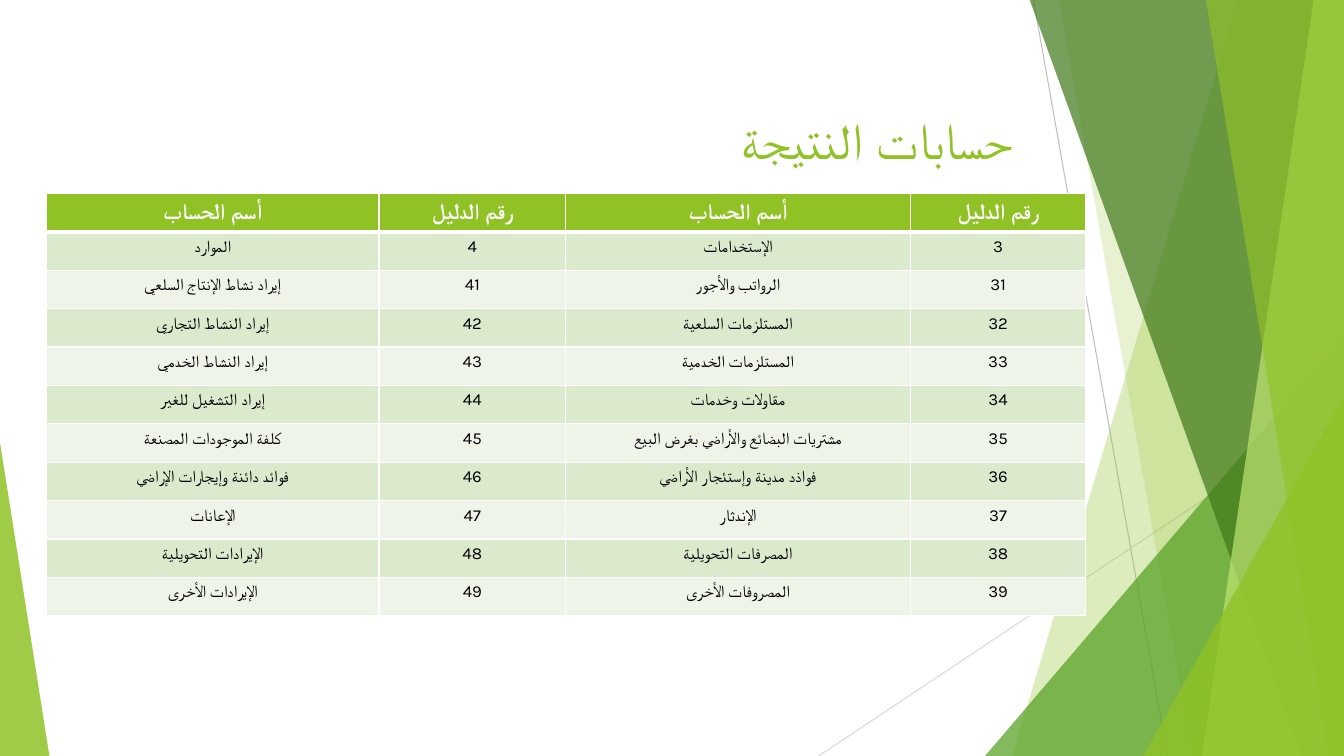
import pptx
import pptx.dml.color
import pptx.enum.shapes
import pptx.enum.text
import pptx.oxml.ns
import pptx.util
from lxml import etree

Inches = pptx.util.Inches
Pt = pptx.util.Pt
qn = pptx.oxml.ns.qn
ALIGN = pptx.enum.text.PP_ALIGN

HUE = {
    "lime": "90C226", "leaf": "54A021", "moss": "3F7819", "pale": "C0E474",
    "band": "DBE9CD", "soft": "EEF4E8", "white": "FFFFFF", "black": "000000",
    "gray": "BFBFBF", "mist": "D9D9D9",
}

HEADS = ["أسم الحساب", "رقم الدليل"] * 2
ROWS = [
    ("الموارد", "4", "الإستخدامات", "3"),
    ("إيراد نشاط الإنتاج السلعي", "41", "الرواتب والأجور", "31"),
    ("إيراد النشاط التجاري", "42", "المستلزمات السلعية", "32"),
    ("إيراد النشاط الخدمي", "43", "المستلزمات الخدمية", "33"),
    ("إيراد التشغيل للغير", "44", "مقاولات وخدمات", "34"),
    ("كلفة الموجودات المصنعة", "45", "مشتريات البضائع والأراضي بغرض البيع", "35"),
    ("فوائد دائنة وإيجارات الإراضي", "46", "فواذد مدينة وإستئجار الأراضي", "36"),
    ("الإعانات", "47", "الإندثار", "37"),
    ("الإيرادات التحويلية", "48", "المصرفات التحويلية", "38"),
    ("الإيرادات الأخرى", "49", "المصروفات الأخرى", "39"),
]
WIDTHS = [3.3, 1.85, 3.42, 1.74]


def rgb(name):
    return pptx.dml.color.RGBColor.from_string(HUE[name])


def paint(shape, hue, alpha):
    """Fill a shape with a see-through colour and no outline."""
    shape.shadow.inherit = False
    shape.line.fill.background()
    shape.fill.solid()
    shape.fill.fore_color.rgb = rgb(hue)
    color = shape.fill._xPr.find(".//" + qn("a:srgbClr"))
    etree.SubElement(color, qn("a:alpha"), val=str(alpha * 1000))


def add_line(slide, start, end, hue):
    line = slide.shapes.add_connector(
        pptx.enum.shapes.MSO_CONNECTOR.STRAIGHT,
        *[Inches(v) for v in start + end])
    line.line.color.rgb = rgb(hue)
    line.line.width = Pt(0.75)
    etree.SubElement(line.element.spPr, qn("a:effectLst"))


def add_facet(slide, top, foot, hue, alpha):
    """Panel from a slanted left edge to the right side of the slide."""
    spots = [(top, -0.01), (13.33, -0.01), (13.33, 7.5), (foot, 7.5)]
    spots = [(Inches(x), Inches(y)) for x, y in spots]
    pen = slide.shapes.build_freeform(*spots[0])
    pen.add_line_segments(spots[1:], close=True)
    paint(pen.convert_to_shape(), hue, alpha)


def add_wedge(slide, box, tip, hue, alpha):
    wedge = slide.shapes.add_shape(
        pptx.enum.shapes.MSO_SHAPE.ISOSCELES_TRIANGLE,
        *[Inches(v) for v in box])
    wedge.adjustments[0] = tip
    paint(wedge, hue, alpha)


def add_run(para, text, size, hue, face, bold=False):
    run = para.add_run()
    run.text = text
    font = run.font
    font.size, font.bold, font.name = Pt(size), bold, face
    font.color.rgb = rgb(hue)
    # Arabic letters take the complex-script face
    etree.SubElement(run._r.get_or_add_rPr(), qn("a:cs"), typeface=face)


def set_title(slide, text):
    title = slide.shapes.title
    title.left, title.top = Inches(0.74), Inches(1.03)
    title.width, title.height = Inches(9.4), Inches(1.08)
    frame = title.text_frame
    frame.word_wrap = True
    frame.auto_size = pptx.enum.text.MSO_AUTO_SIZE.NONE
    frame.vertical_anchor = pptx.enum.text.MSO_ANCHOR.TOP
    para = frame.paragraphs[0]
    para.alignment = ALIGN.RIGHT
    para._p.get_or_add_pPr().set("rtl", "1")
    add_run(para, text, 36, "lime", "Arial")
    # Bring the title in front of the backdrop
    title.element.getparent().append(title.element)


def set_edges(cell, foot):
    """White cell borders; foot is the bottom width in points."""
    props = cell._tc.get_or_add_tcPr()
    for spot, (side, width) in enumerate(
            [("L", 1), ("R", 1), ("T", 1), ("B", foot)]):
        edge = etree.Element(qn("a:ln" + side), w=str(Pt(width)))
        fill = etree.SubElement(edge, qn("a:solidFill"))
        etree.SubElement(fill, qn("a:srgbClr"), val=HUE["white"])
        props.insert(spot, edge)


def set_cell(cell, text, fill, ink, size, head):
    cell.fill.solid()
    cell.fill.fore_color.rgb = rgb(fill)
    set_edges(cell, 3 if head else 1)
    para = cell.text_frame.paragraphs[0]
    para.alignment = ALIGN.CENTER
    add_run(para, text, size, ink, "Karla", head)


def add_grid(slide):
    rows = [HEADS, *ROWS]
    grid = slide.shapes.add_table(
        len(rows), len(WIDTHS), Inches(0.46), Inches(1.92),
        Inches(sum(WIDTHS)), Inches(4.19)).table
    for col, width in zip(grid.columns, WIDTHS):
        col.width = Inches(width)
    for r, row in enumerate(rows):
        if r == 0:
            look = ("lime", "white", 16, True)
        else:
            look = ("band" if r % 2 else "soft", "black", 12, False)
        for c, text in enumerate(row):
            set_cell(grid.cell(r, c), text, *look)


def add_back(slide):
    add_line(slide, (10.25, 0), (11.58, 7.5), "gray")
    add_line(slide, (13.33, 4.03), (8.12, 7.5), "mist")
    add_facet(slide, 12.28, 10.04, "lime", 30)
    add_facet(slide, 10.5, 11.83, "lime", 20)
    add_wedge(slide, (9.77, 3.33, 3.56, 4.17), 1, "leaf", 72)
    add_facet(slide, 10.21, 12.91, "moss", 70)
    add_facet(slide, 13.03, 11.92, "pale", 70)
    add_facet(slide, 11.96, 13.18, "lime", 65)
    add_wedge(slide, (11.34, 3.93, 1.99, 3.57), 1, "lime", 80)
    add_wedge(slide, (0, 4.39, 0.49, 3.11), 0, "lime", 85)


def main():
    deck = pptx.Presentation()
    deck.slide_width, deck.slide_height = Inches(13.33), Inches(7.5)
    slide = deck.slides.add_slide(deck.slide_layouts.get_by_name("Title Only"))
    # Backdrop, then title and table
    add_back(slide)
    set_title(slide, "حسابات النتيجة")
    add_grid(slide)
    deck.save("out.pptx")


if __name__ == "__main__":
    main()
